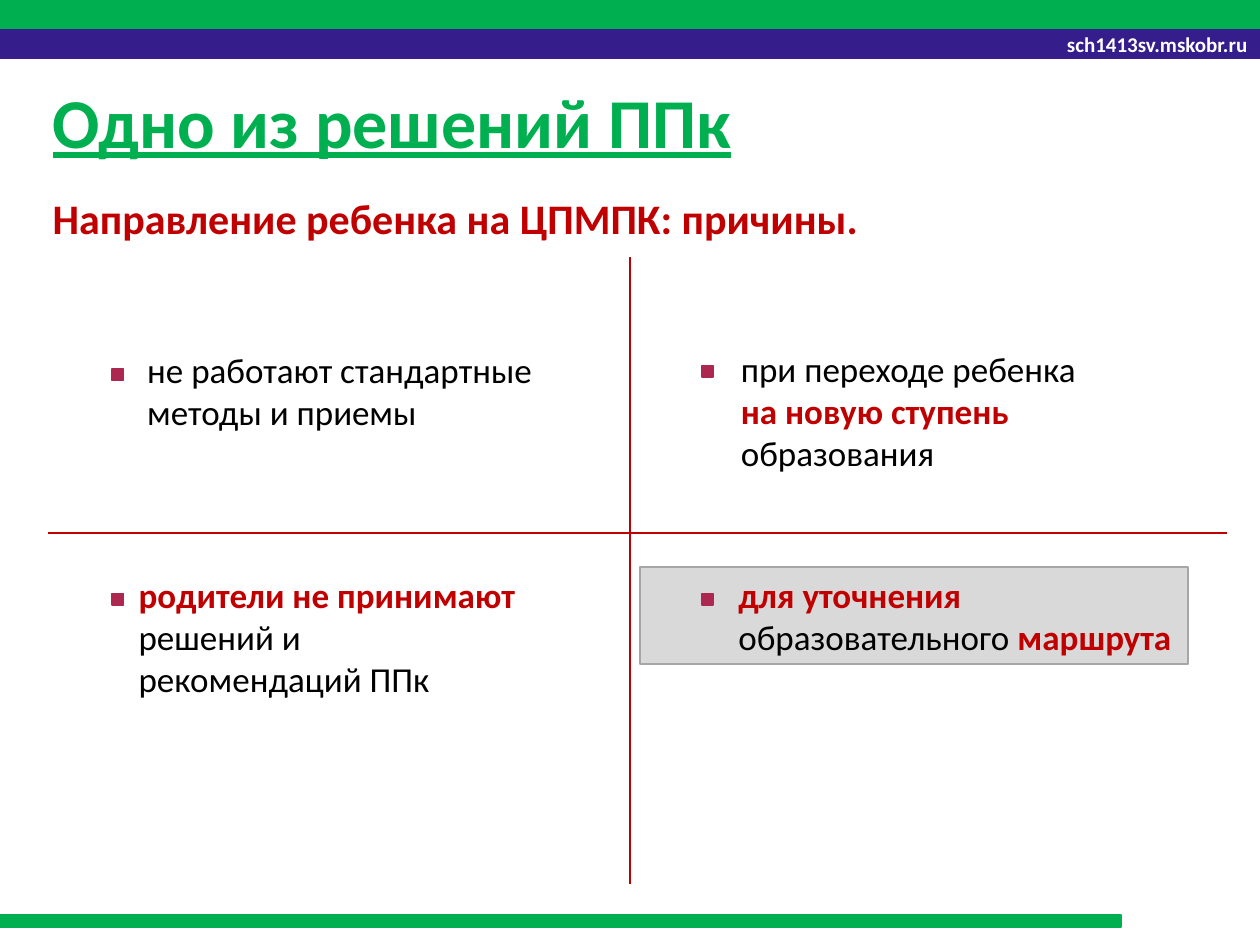
from lxml import etree
from pptx import Presentation
from pptx.dml.color import RGBColor
from pptx.enum.shapes import MSO_CONNECTOR, MSO_SHAPE
from pptx.enum.text import MSO_ANCHOR, MSO_AUTO_SIZE, PP_ALIGN
from pptx.oxml.ns import qn
from pptx.util import Inches, Pt

RECTANGLE = MSO_SHAPE.RECTANGLE
STRAIGHT = MSO_CONNECTOR.STRAIGHT
TOP, MIDDLE = MSO_ANCHOR.TOP, MSO_ANCHOR.MIDDLE
LEFT, RIGHT = PP_ALIGN.LEFT, PP_ALIGN.RIGHT
NO_AUTOFIT = MSO_AUTO_SIZE.NONE

FONT = "Calibri"
GREEN, VIOLET, RED, BERRY = "00B050", "351D8C", "C00000", "AD2851"
BLACK, WHITE, PALE_GREY, GREY = "000000", "FFFFFF", "D9D9D9", "A6A6A6"

SITE = "sch1413sv.mskobr.ru"
TITLE = "Одно из решений ППк"
SUBTITLE = "Направление ребенка на ЦПМПК: причины."

BARS = [
    ((0, 0, 10, 0.22), GREEN),
    ((0, 7.26, 8.9, 0.1), GREEN),
]
DIVIDERS = [(5, 2.04, 5, 7.02), (0.38, 4.23, 9.74, 4.23)]

REASONS = [
    {"box": (1.07, 2.72, 3.35, 0.77), "indent": 0.1, "marker": (0.89, 2.93),
     "lines": [[("не работают стандартные", False)],
               [("методы и приемы", False)]]},
    {"box": (5.48, 2.71, 3.53, 1.11), "indent": 0.4, "marker": (5.57, 2.9),
     "lines": [[("при переходе ребенка", False)],
               [("на новую ступень", True)],
               [("образования", False)]]},
    {"box": (0.57, 4.5, 3.71, 1.11), "indent": 0.53, "marker": (0.89, 4.71),
     "lines": [[("родители не принимают", True)],
               [("решений и", False)],
               [("рекомендаций ППк", False)]]},
    {"box": (5.08, 4.5, 4.35, 0.77), "indent": 0.78, "marker": (5.57, 4.71),
     "panel": True,
     "lines": [[("для уточнения", True)],
               [("образовательного ", False), ("маршрута", True)]]},
]
MARKER_SIZE = 0.09


def color(hex_value):
    return RGBColor.from_string(hex_value)


def inches(values):
    return [Inches(value) for value in values]


def add_rectangle(slide, box, fill, line, line_width=1):
    rectangle = slide.shapes.add_shape(RECTANGLE, *inches(box))
    rectangle.shadow.inherit = False
    rectangle.fill.solid()
    rectangle.fill.fore_color.rgb = color(fill)
    rectangle.line.color.rgb = color(line)
    rectangle.line.width = Pt(line_width)
    return rectangle


def add_divider(slide, ends):
    divider = slide.shapes.add_connector(STRAIGHT, *inches(ends))
    divider.line.color.rgb = color(RED)
    divider.line.width = Pt(1.25)
    etree.SubElement(divider.element.spPr, qn("a:effectLst"))


def add_run(paragraph, text, size, hex_value, bold):
    run = paragraph.add_run()
    run.text = text
    run.font.name = FONT
    run.font.size = Pt(size)
    run.font.bold = bold
    run.font.color.rgb = color(hex_value)
    return run


def write_line(frame, text, size, hex_value, align=LEFT, anchor=MIDDLE):
    frame.vertical_anchor = anchor
    paragraph = frame.paragraphs[0]
    paragraph.alignment = align
    return paragraph, add_run(paragraph, text, size, hex_value, True)


def add_reason(slide, reason):
    if reason.get("panel"):
        holder = add_rectangle(slide, reason["box"], PALE_GREY, GREY, 0.75)
    else:
        holder = slide.shapes.add_textbox(*inches(reason["box"]))
    frame = holder.text_frame
    frame.word_wrap = True
    frame.vertical_anchor = TOP
    frame.margin_left = Inches(reason["indent"])
    frame.margin_right = 0
    for index, line in enumerate(reason["lines"]):
        paragraph = frame.add_paragraph() if index else frame.paragraphs[0]
        paragraph.alignment = LEFT
        for text, key in line:
            add_run(paragraph, text, 20, RED if key else BLACK, key)
    marker_box = (*reason["marker"], MARKER_SIZE, MARKER_SIZE)
    add_rectangle(slide, marker_box, BERRY, BERRY)


def main():
    deck = Presentation()
    deck.slide_width, deck.slide_height = inches((10, 7.5))
    slide = deck.slides.add_slide(deck.slide_layouts[5])

    for box, fill in BARS:
        add_rectangle(slide, box, fill, fill)
    site_bar = add_rectangle(slide, (0, 0.24, 10, 0.22), VIOLET, VIOLET)
    write_line(site_bar.text_frame, SITE, 12, WHITE, RIGHT)

    title = slide.shapes.title
    title.left, title.top, title.width, title.height = inches(
        (0.32, 0.49, 9.37, 1.01))
    title.text_frame.auto_size = NO_AUTOFIT
    paragraph, run = write_line(title.text_frame, TITLE, 40, GREEN)
    paragraph.line_spacing = 0.9
    run.font.underline = True

    subtitle = slide.shapes.add_textbox(*inches((0.32, 1.48, 6.66, 0.5)))
    subtitle.text_frame.word_wrap = True
    write_line(subtitle.text_frame, SUBTITLE, 24, RED, anchor=TOP)

    for ends in DIVIDERS:
        add_divider(slide, ends)
    for reason in REASONS:
        add_reason(slide, reason)

    deck.save("out.pptx")


if __name__ == "__main__":
    main()
